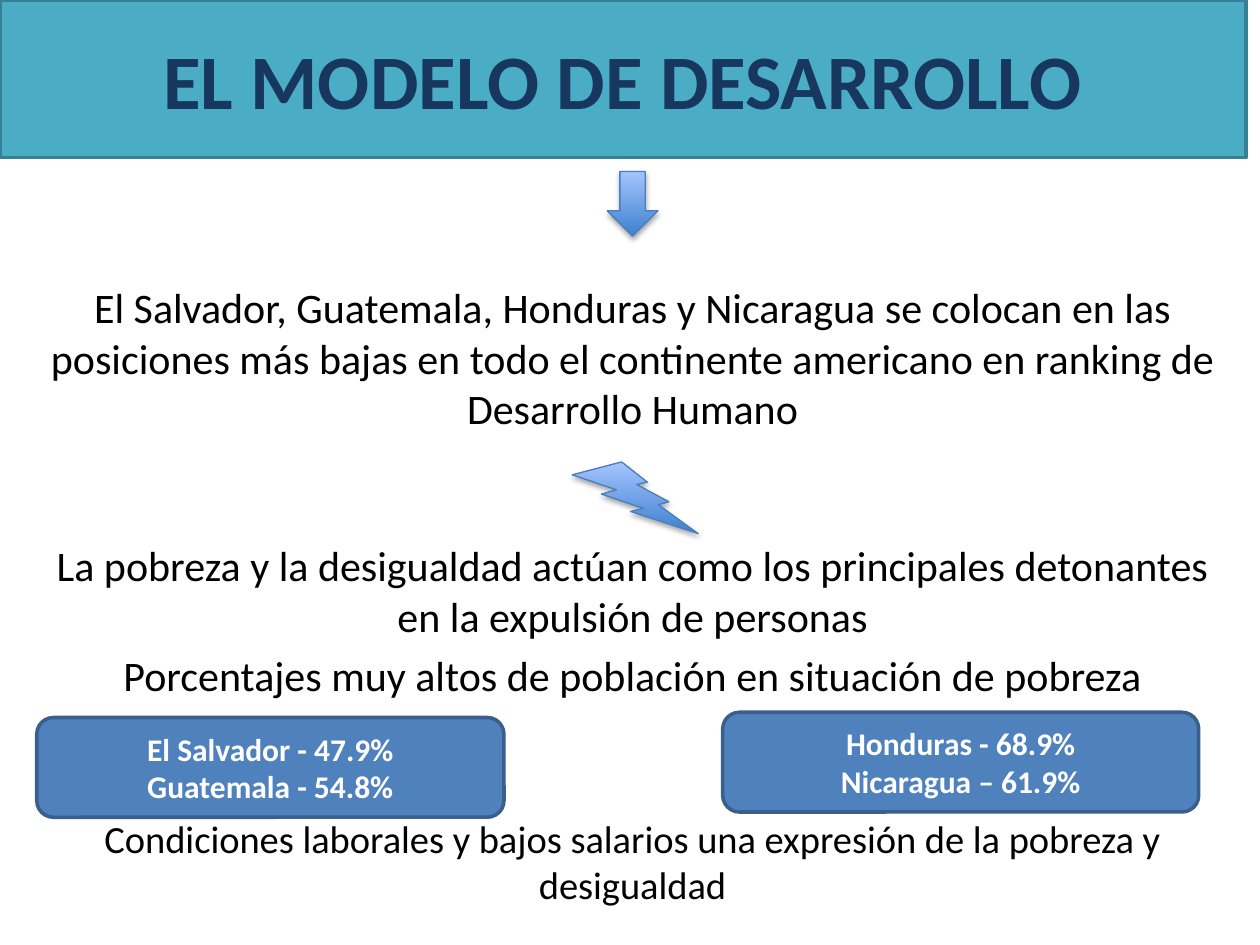
from lxml.etree import SubElement
from pptx import Presentation
from pptx.dml.color import RGBColor
from pptx.enum.shapes import MSO_SHAPE
from pptx.enum.text import MSO_ANCHOR, PP_ALIGN
from pptx.oxml.ns import qn
from pptx.util import Pt

FONT = "Calibri"
TEAL = RGBColor(0x4B, 0xAC, 0xC6)
TEAL_EDGE = RGBColor(0x37, 0x7F, 0x92)
NAVY = RGBColor(0x17, 0x37, 0x5E)
BLUE = RGBColor(0x4F, 0x81, 0xBD)
BLUE_EDGE = RGBColor(0x3A, 0x5F, 0x8C)
ICON_DARK = RGBColor(0x3F, 0x80, 0xCE)
ICON_LIGHT = RGBColor(0xA4, 0xC4, 0xFF)
ICON_EDGE = RGBColor(0x4B, 0x7E, 0xBC)
BLACK = RGBColor(0, 0, 0)
WHITE = RGBColor(0xFF, 0xFF, 0xFF)


def add_para(frame, text, size, color, bold=False, before=0):
    """Write one centred paragraph, using the empty first one if it is free."""
    first = frame.paragraphs[0]
    para = frame.add_paragraph() if first.runs else first
    para.alignment = PP_ALIGN.CENTER
    para.space_before = Pt(before)
    span = para.add_run()
    span.text = text
    span.font.name = FONT
    span.font.size = Pt(size)
    span.font.bold = bold
    span.font.color.rgb = color


def add_panel(page, box, kind, fill, edge, lines, size, color):
    """Filled shape with bold centred lines of text."""
    panel = page.shapes.add_shape(kind, *map(Pt, box))
    panel.shadow.inherit = False
    panel.fill.solid()
    panel.fill.fore_color.rgb = fill
    panel.line.color.rgb = edge
    panel.line.width = Pt(2)
    frame = panel.text_frame
    frame.word_wrap = True
    frame.vertical_anchor = MSO_ANCHOR.MIDDLE
    for line in lines:
        add_para(frame, line, size, color, bold=True)


def add_icon(page, box, kind):
    """Small gradient shape with a soft shadow below it."""
    icon = page.shapes.add_shape(kind, *map(Pt, box))
    icon.fill.gradient()
    icon.fill.gradient_angle = 90
    for stop, color in zip(icon.fill.gradient_stops, (ICON_DARK, ICON_LIGHT)):
        stop.color.rgb = color
    icon.line.color.rgb = ICON_EDGE
    icon.line.width = Pt(0.75)
    icon.shadow.inherit = False
    effects = icon.element.spPr.find(qn("a:effectLst"))
    shadow = SubElement(effects, qn("a:outerShdw"), blurRad=str(Pt(3.1)),
                        dist=str(Pt(1.8)), dir="5400000", rotWithShape="0")
    tint = SubElement(shadow, qn("a:srgbClr"), val="000000")
    SubElement(tint, qn("a:alpha"), val="35000")


def add_body(page, box):
    """Statements, spaced to leave room for the icons and panels."""
    body = page.shapes.add_textbox(*map(Pt, box))
    frame = body.text_frame
    frame.word_wrap = True
    frame.margin_top = Pt(63)
    statements = (
        ("El Salvador, Guatemala, Honduras y Nicaragua se colocan en las posiciones "
         "más bajas en todo el continente americano en ranking de Desarrollo Humano", 24, 0),
        ("La pobreza y la desigualdad actúan como los principales detonantes "
         "en la expulsión de personas", 24, 61),
        ("Porcentajes muy altos de población en situación de pobreza", 24, 5),
        ("Condiciones laborales y bajos salarios una expresión de la pobreza "
         "y desigualdad", 22, 66),
    )
    for text, size, before in statements:
        add_para(frame, text, size, BLACK, before=before)


def build_slide(page):
    # Title band
    add_panel(page, (0, 0, 712, 90), MSO_SHAPE.RECTANGLE, TEAL, TEAL_EDGE,
              ["EL MODELO DE DESARROLLO"], 44, NAVY)
    # Statements and the icons between them
    add_body(page, (21, 98, 681, 433))
    add_icon(page, (347, 98, 29, 37), MSO_SHAPE.DOWN_ARROW)
    add_icon(page, (327, 264, 72, 41), MSO_SHAPE.LIGHTNING_BOLT)
    # Poverty rates
    rates = (
        ((21, 410, 267, 57), ["El Salvador - 47.9%", "Guatemala - 54.8%"]),
        ((413, 407, 272, 57), ["Honduras - 68.9%", "Nicaragua – 61.9%"]),
    )
    for box, lines in rates:
        add_panel(page, box, MSO_SHAPE.ROUNDED_RECTANGLE, BLUE, BLUE_EDGE,
                  lines, 18, WHITE)


def main():
    deck = Presentation()
    deck.slide_width, deck.slide_height = Pt(720), Pt(540)
    build_slide(deck.slides.add_slide(deck.slide_layouts[6]))
    deck.save("out.pptx")


if __name__ == "__main__":
    main()
